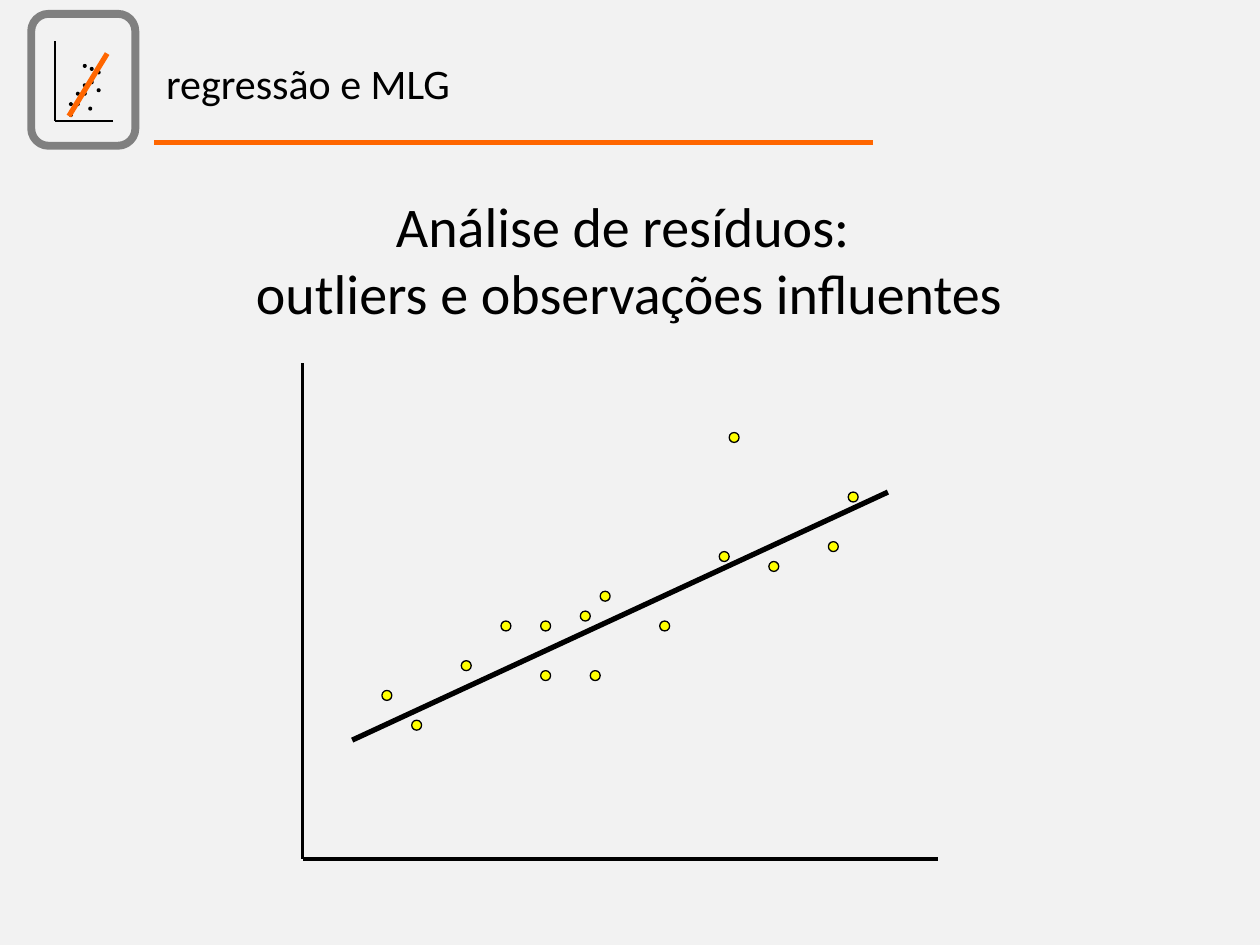
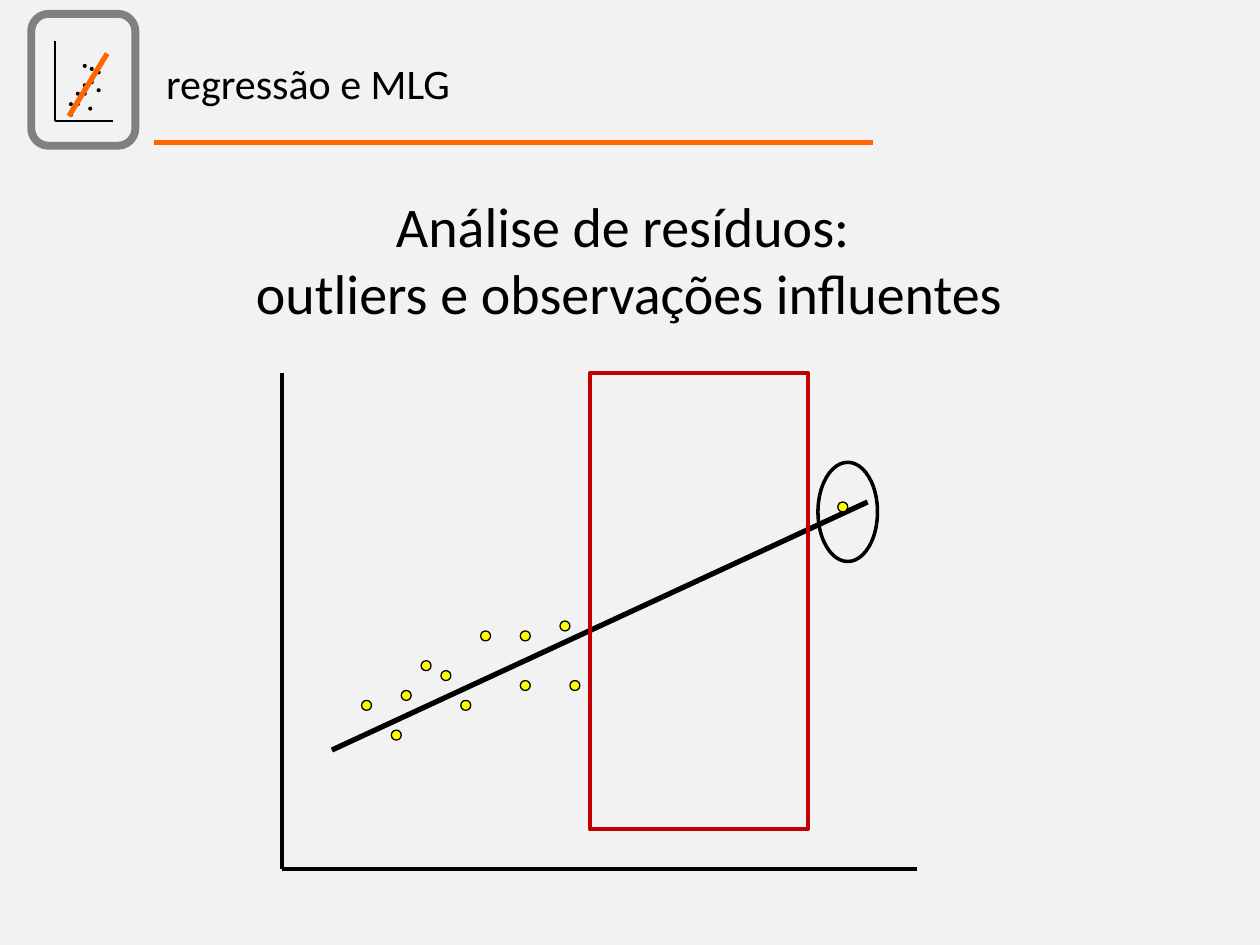
"""Two slides on residual analysis: an outlier, then an influential observation."""
from dataclasses import dataclass

from lxml.etree import SubElement
from pptx import Presentation
from pptx.dml.color import RGBColor as Rgb
from pptx.enum.shapes import MSO_CONNECTOR as Connector, MSO_SHAPE as Preset
from pptx.enum.text import PP_ALIGN as Align
from pptx.oxml.ns import qn
from pptx.util import Cm, Pt


@dataclass(frozen=True)
class Theme:
    background: Rgb = Rgb(0xF2, 0xF2, 0xF2)
    ink: Rgb = Rgb(0, 0, 0)
    accent: Rgb = Rgb(0xFF, 0x66, 0x00)
    frame: Rgb = Rgb(0x80, 0x80, 0x80)
    point: Rgb = Rgb(0xFF, 0xFF, 0x00)
    gap: Rgb = Rgb(0xC0, 0, 0)
    font: str = "Calibri"
    title: Pt = Pt(32)
    section: Pt = Pt(24)


theme = Theme()


def add_outline(shapes, preset, box, fill=None, line=None, width=0):
    shape = shapes.add_shape(preset, *[Cm(length) for length in box])
    shape.shadow.inherit = False
    for part, color in ((shape.fill, fill), (shape.line.fill, line)):
        if color is None:
            part.background()
        else:
            part.solid()
            part.fore_color.rgb = color
    if line is not None:
        shape.line.width = Pt(width)


def add_line(shapes, ends, color, width):
    line = shapes.add_connector(Connector.STRAIGHT, *[Cm(length) for length in ends])
    line.line.color.rgb = color
    line.line.width = Pt(width)
    SubElement(line._element.spPr, qn("a:effectLst"))


TEXTS = [
    ((1.09, 3.73, 23.19, 3.0),
     ["Análise de resíduos: ", "outliers e observações influentes"],
     Align.CENTER, {"name": theme.font, "size": theme.title}),
    ((3.1, 1.04, 15.11, 1.3), ["regressão e MLG"],
     Align.LEFT, {"name": theme.font, "size": theme.section}),
]

ICON_DOT = 0.08
ICON_DOTS = [
    (1.78, 2.15), (1.67, 1.85), (1.39, 2.28), (1.53, 2.06), (1.53, 1.85), (1.81, 1.62),
    (1.95, 1.42), (1.67, 1.29), (1.81, 1.35), (1.67, 1.68), (1.95, 1.78), (1.39, 2.06),
]
ICON_LINES = [
    ((1.11, 0.83, 1.11, 2.44), theme.ink, 1.5),
    ((2.28, 2.44, 1.11, 2.44), theme.ink, 1.5),
    ((1.39, 2.34, 2.16, 1.08), theme.accent, 3),
]

# Plots are laid out in grid steps, right of and above the origin.
STEP = 0.2
PLOT_LINES = [((0, 50, 0, 0), 2), ((0, 0, 64, 0), 2), ((5, 12, 59, 37), 3)]
COMMON_POINTS = [(8, 17), (11, 14), (16, 20), (24, 24), (24, 19), (28, 25), (20, 24), (29, 19)]
PLOTS = [
    {"origin": (6.1, 17.32),
     "points": [(30, 27), (36, 24), (42, 31), (47, 30), (55, 37), (53, 32), (43, 43)],
     "marks": []},
    {"origin": (5.69, 17.52),
     "points": [(18, 17), (12, 18), (56, 37), (14, 21)],
     "marks": [(Preset.RECTANGLE, (31, 50, 22, 46), theme.gap, 2.25),
               (Preset.OVAL, (54, 41, 6, 10), theme.ink, 2)]},
]

presentation = Presentation()
presentation.slide_width, presentation.slide_height = Cm(25.4), Cm(19.05)

for plot in PLOTS:
    slide = presentation.slides.add_slide(presentation.slide_layouts[6])
    slide.background.fill.solid()
    slide.background.fill.fore_color.rgb = theme.background

    add_line(slide.shapes, (17.6, 2.87, 3.1, 2.87), theme.accent, 3)

    icon = slide.shapes.add_group_shape().shapes
    add_outline(icon, Preset.ROUNDED_RECTANGLE, (0.63, 0.28, 2.1, 2.66), None, theme.frame, 4.5)
    for left, top in ICON_DOTS:
        add_outline(icon, Preset.OVAL, (left, top, ICON_DOT, ICON_DOT), theme.ink)
    for ends, color, width in ICON_LINES:
        add_line(icon, ends, color, width)

    scatter = slide.shapes.add_group_shape().shapes
    origin_x, origin_y = plot["origin"]
    for (x1, y1, x2, y2), width in PLOT_LINES:
        ends = (origin_x + x1 * STEP, origin_y - y1 * STEP,
                origin_x + x2 * STEP, origin_y - y2 * STEP)
        add_line(scatter, ends, theme.ink, width)
    outlines = [(Preset.OVAL, (x, y, 1, 1), theme.point, theme.ink, 0.75)
                for x, y in COMMON_POINTS + plot["points"]]
    outlines += [(preset, box, None, color, width)
                 for preset, box, color, width in plot["marks"]]
    for preset, (x, y, across, down), fill, color, width in outlines:
        box = (origin_x + x * STEP, origin_y - y * STEP, across * STEP, down * STEP)
        add_outline(scatter, preset, box, fill, color, width)

    for box, lines, alignment, font_values in TEXTS:
        frame = slide.shapes.add_textbox(*[Cm(length) for length in box]).text_frame
        frame.word_wrap = True
        frame.text = "\n".join(lines)
        for paragraph in frame.paragraphs:
            paragraph.alignment = alignment
            for run in paragraph.runs:
                run.font.color.rgb = theme.ink
                for attribute, value in font_values.items():
                    setattr(run.font, attribute, value)

presentation.save("out.pptx")
